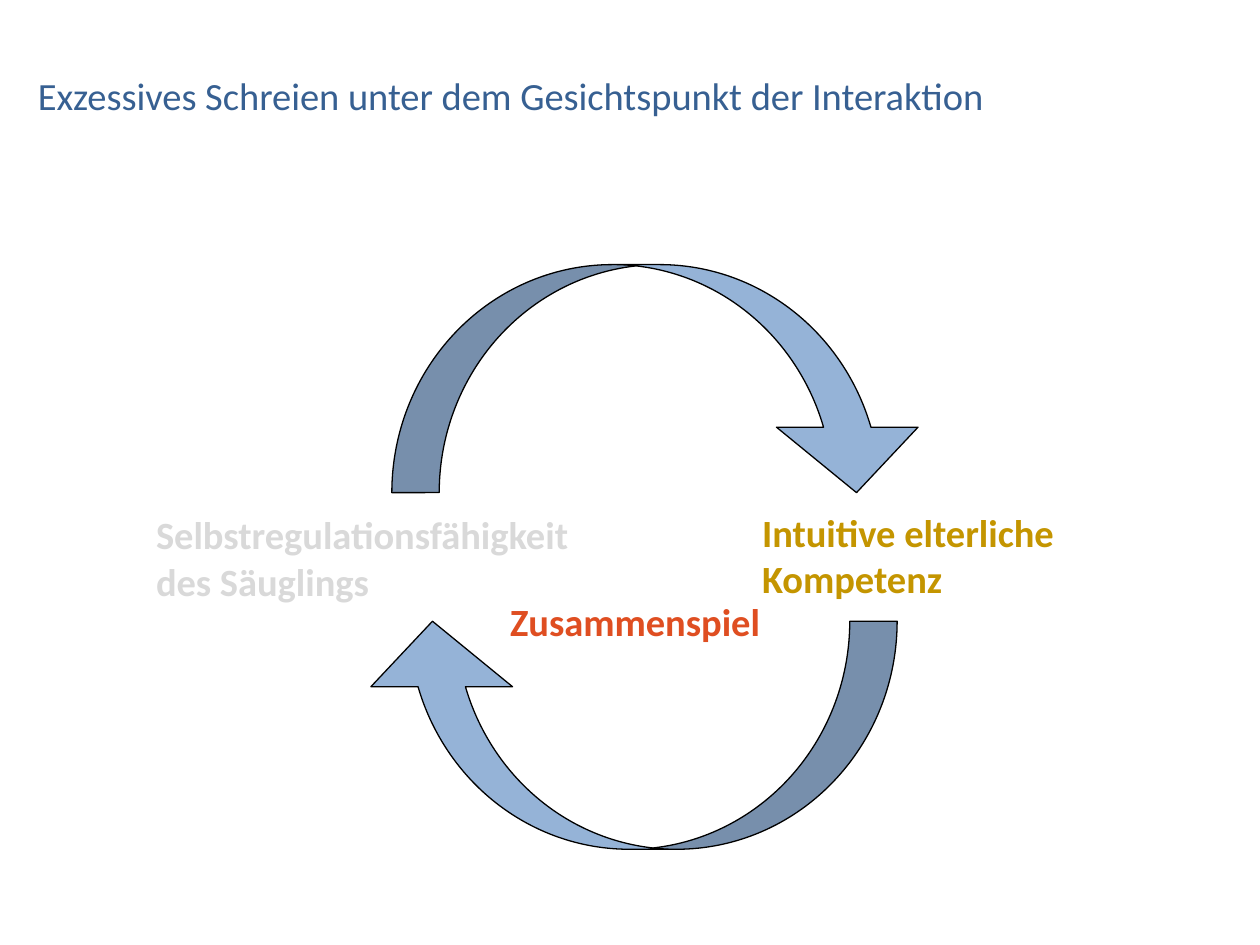
import pptx
import pptx.dml.color
import pptx.enum.shapes
import pptx.enum.text
import pptx.util
from pptx.util import Inches

COLOURS = {
    "title": "376092",
    "arrow": "95B3D7",
    "outline": "000000",
    "infant": "D9D9D9",
    "parents": "C49500",
    "interplay": "DF4E21",
}
FONT_NAME = "Calibri"
FONT_SIZE = 22
ARROW_SIZE = (4.25, 1.81)
ARROW_ADJUSTMENTS = (0.208, 0.621, 0.287)


def colour(name):
    return pptx.dml.color.RGBColor.from_string(COLOURS[name])


def write_text(text_frame, text, colour_name, bold=False):
    text_frame.word_wrap = True
    paragraph = text_frame.paragraphs[0]
    paragraph.alignment = pptx.enum.text.PP_ALIGN.LEFT
    run = paragraph.add_run()
    run.text = text
    run.font.name = FONT_NAME
    run.font.size = pptx.util.Pt(FONT_SIZE)
    run.font.bold = bold
    run.font.color.rgb = colour(colour_name)


def set_title(slide, text):
    title = slide.shapes.title
    title.left, title.top = Inches(0.2), Inches(0.13)
    title.width, title.height = Inches(9.5), Inches(1.25)
    title.text_frame.vertical_anchor = pptx.enum.text.MSO_ANCHOR.MIDDLE
    write_text(title.text_frame, text, "title")


def add_cycle_arrow(slide, left, top, rotation=0):
    width, height = ARROW_SIZE
    shape = slide.shapes.add_shape(
        pptx.enum.shapes.MSO_SHAPE.CURVED_DOWN_ARROW,
        Inches(left), Inches(top), Inches(width), Inches(height))
    for index, value in enumerate(ARROW_ADJUSTMENTS):
        shape.adjustments[index] = value
    shape.rotation = rotation
    shape.shadow.inherit = False
    shape.fill.solid()
    shape.fill.fore_color.rgb = colour("arrow")
    shape.line.color.rgb = colour("outline")
    shape.line.width = pptx.util.Pt(0.75)


def add_label(slide, text, colour_name, left, top, width, height):
    shape = slide.shapes.add_textbox(
        Inches(left), Inches(top), Inches(width), Inches(height))
    write_text(shape.text_frame, text, colour_name, bold=True)
    shape.text_frame.auto_size = pptx.enum.text.MSO_AUTO_SIZE.SHAPE_TO_FIT_TEXT


def main():
    presentation = pptx.Presentation()
    presentation.slide_width = Inches(10)
    presentation.slide_height = Inches(7.5)
    slide = presentation.slides.add_slide(presentation.slide_layouts[5])

    set_title(slide, "Exzessives Schreien unter dem Gesichtspunkt der Interaktion")

    # Cycle of two opposed arrows
    add_cycle_arrow(slide, 3.11, 2.1)
    add_cycle_arrow(slide, 2.87, 4.93, rotation=180)

    # Infant, parents and their interplay
    add_label(slide, "Selbstregulationsfähigkeit des Säuglings", "infant",
              1.14, 4.01, 3.86, 0.84)
    add_label(slide, "Intuitive elterliche Kompetenz", "parents",
              5.95, 3.99, 3.46, 0.84)
    add_label(slide, "Zusammenspiel", "interplay", 3.95, 4.7, 2.24, 0.47)

    presentation.save("out.pptx")


if __name__ == "__main__":
    main()
